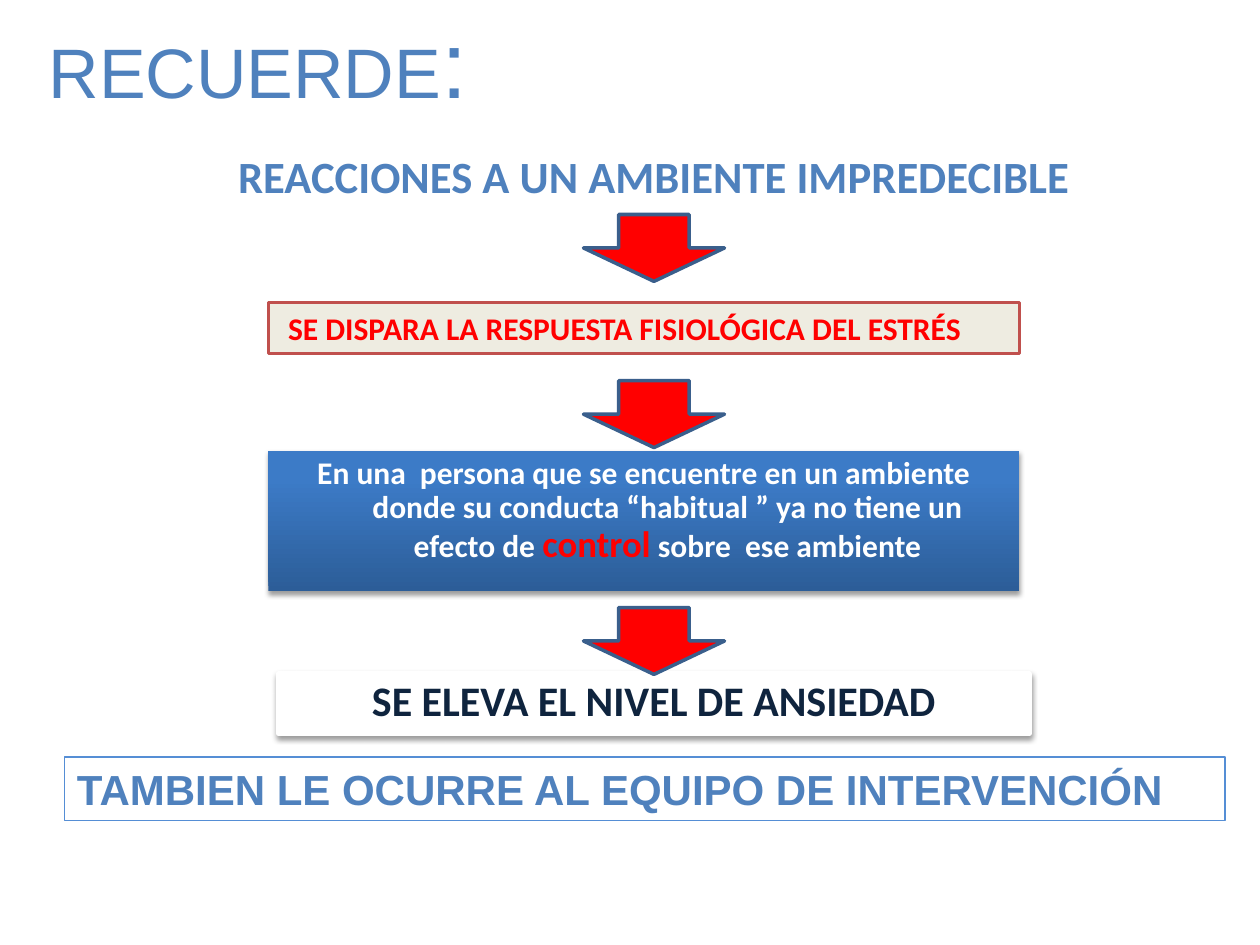
from lxml import etree
from pptx import Presentation
from pptx.dml.color import RGBColor
from pptx.enum import shapes, text
from pptx.oxml import ns
from pptx.util import Pt

COLORS = {
    "blue": "4F81BD", "red": "FF0000", "white": "FFFFFF", "navy": "0F243E",
    "cream": "EEECE1", "brick": "C0504D", "arrow_line": "3A5F8C",
    "sky": "558ED5", "deep": "2C5D98", "bright": "3C7BC7", "black": "000000",
}
CENTER = text.PP_ALIGN.CENTER
LEFT = text.PP_ALIGN.LEFT


def rgb(name):
    return RGBColor.from_string(COLORS[name])


def place(s, box):
    for name, value in zip(("left", "top", "width", "height"), box):
        setattr(s, name, Pt(value))


def write(s, runs, align=CENTER, wrap=True, anchor=text.MSO_ANCHOR.TOP, **margins):
    """Fill one paragraph with (text, font, size, colour, bold) runs."""
    tf = s.text_frame
    frame = {"auto_size": text.MSO_AUTO_SIZE.NONE, "word_wrap": wrap,
             "vertical_anchor": anchor}
    frame.update({name: Pt(value) for name, value in margins.items()})
    for name, value in frame.items():
        setattr(tf, name, value)
    p = tf.paragraphs[0]
    p.alignment = align
    p.space_before = Pt(0)
    for words, font, size, color, bold in runs:
        r = p.add_run()
        r.text = words
        for name, value in {"name": font, "size": Pt(size), "bold": bold}.items():
            setattr(r.font, name, value)
        r.font.color.rgb = rgb(color)
    return p


def add_shadow(s):
    s.shadow.inherit = False
    effects = s._element.spPr.find(ns.qn("a:effectLst"))
    shadow = etree.SubElement(effects, ns.qn("a:outerShdw"), blurRad=str(Pt(3.1)),
                              dist=str(Pt(1.6)), dir="5400000", rotWithShape="0")
    color = etree.SubElement(shadow, ns.qn("a:srgbClr"), val=COLORS["black"])
    etree.SubElement(color, ns.qn("a:alpha"), val="38000")


def add_block(slide, kind, box, fill, line, width):
    s = slide.shapes.add_shape(kind, *map(Pt, box))
    s.shadow.inherit = False
    if fill:
        s.fill.solid()
        s.fill.fore_color.rgb = rgb(fill)
    else:
        s.fill.background()
    s.line.color.rgb = rgb(line)
    s.line.width = Pt(width)
    return s


def add_box(slide, box, fill, line, width, run, **layout):
    s = add_block(slide, shapes.MSO_SHAPE.RECTANGLE, box, fill, line, width)
    return s, write(s, [run], **layout)


def add_arrow(slide, top):
    add_block(slide, shapes.MSO_SHAPE.DOWN_ARROW, (333.4, top, 80.6, 38.2),
              "red", "arrow_line", 2)


def add_heading(slide, box):
    s = slide.shapes.add_textbox(*map(Pt, box))
    write(s, [("RECUERDE", "Arial", 40, "blue", False),
              (":", "Arial", 54, "blue", False)], wrap=False)


def fill_title(s, box):
    place(s, box)
    write(s, [("REACCIONES A UN AMBIENTE IMPREDECIBLE", "Calibri", 25.5, "blue", True)],
          anchor=text.MSO_ANCHOR.MIDDLE,
          margin_left=5, margin_right=5, margin_top=3, margin_bottom=3)


def fill_body(s, box):
    place(s, box)
    s.fill.gradient()
    s.fill.gradient_angle = 90
    for stop, (position, color) in zip(s.fill.gradient_stops,
                                       ((0, "deep"), (0.8, "bright"))):
        stop.position = position
        stop.color.rgb = rgb(color)
    add_shadow(s)
    p = write(s, [
        ("En una  persona que se encuentre en un ambiente donde su conducta "
         "“habitual ” ya no tiene un efecto de ", "Calibri", 18, "white", True),
        ("control", "Calibri", 21, "red", True),
        (" sobre  ese ambiente", "Calibri", 18, "white", True)])
    p.line_spacing = 0.9
    props = p._p.get_or_add_pPr()
    props.set("marL", str(Pt(27)))
    props.set("indent", str(Pt(-27)))
    etree.SubElement(props, ns.qn("a:buNone"))


def main():
    prs = Presentation()
    prs.slide_width, prs.slide_height = Pt(720), Pt(540)
    slide = prs.slides.add_slide(prs.slide_layouts[1])
    title, body = slide.placeholders
    fill_title(title, (122.4, 82.1, 502.6, 36.7))
    fill_body(body, (153.4, 257.8, 429.1, 79.9))
    add_box(slide, (153.4, 172.8, 429.1, 29.1), "cream", "brick", 2,
            ("SE DISPARA LA RESPUESTA FISIOLÓGICA DEL ESTRÉS", "Calibri", 18, "red", True),
            align=LEFT, margin_left=11.2)
    add_arrow(slide, 217.6)
    anxiety, p = add_box(slide, (159.1, 385.2, 429.1, 34), "white", "white", 3,
                         ("SE ELEVA EL NIVEL DE ANSIEDAD", "Calibri", 24, "navy", True))
    p.line_spacing = 0.9
    add_shadow(anxiety)
    for top in (347.2, 122.6):
        add_arrow(slide, top)
    add_heading(slide, (19.4, -1.4, 256.3, 72.7))
    add_box(slide, (36.9, 432.6, 663.1, 36.2), None, "sky", 0.75,
            ("TAMBIEN LE OCURRE AL EQUIPO DE INTERVENCIÓN", "Arial", 24, "blue", True),
            align=LEFT)
    prs.save("out.pptx")


if __name__ == "__main__":
    main()
